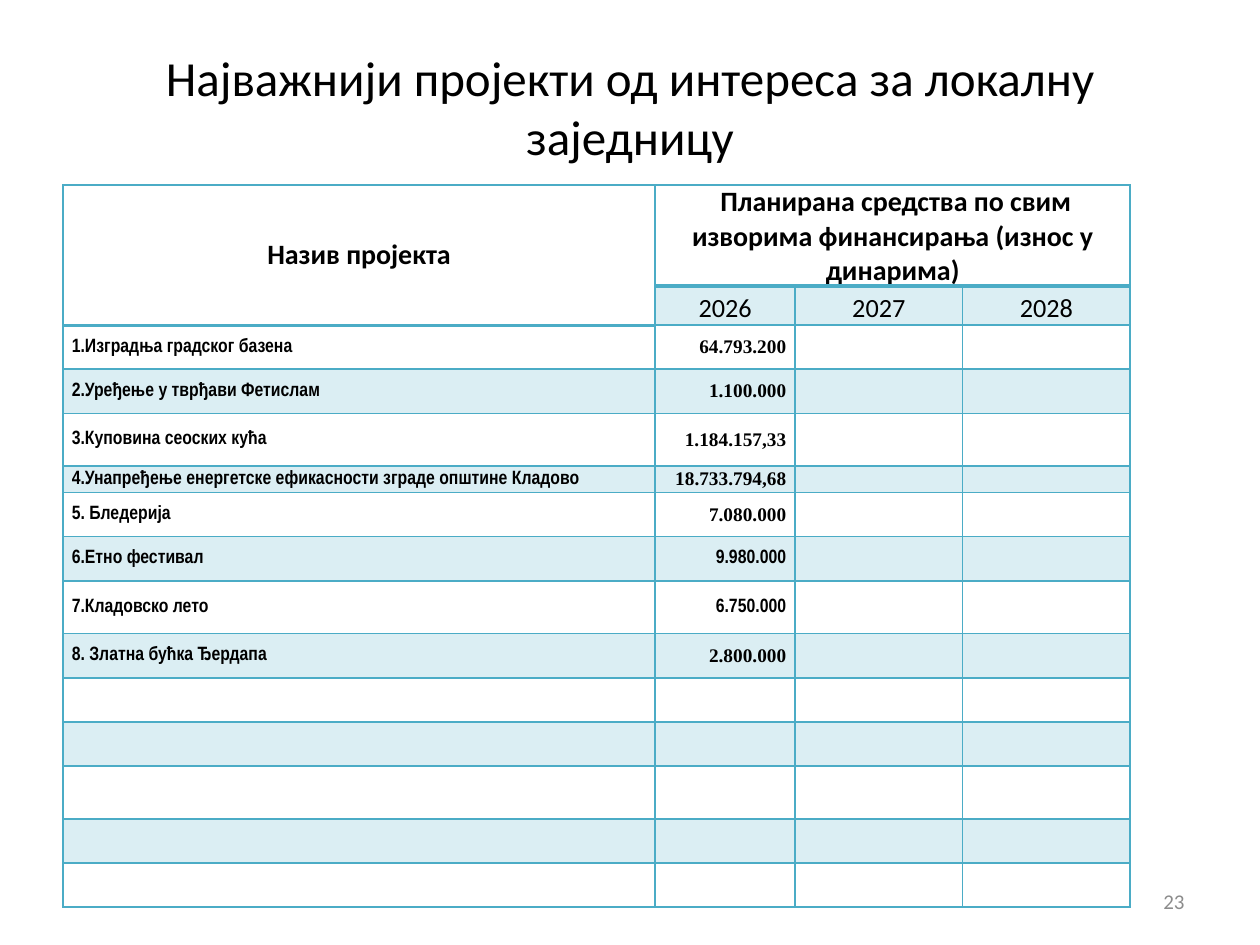
from lxml import etree
from pptx import Presentation
from pptx.dml.color import RGBColor
from pptx.enum import text
from pptx.oxml.ns import qn
from pptx.util import Inches, Pt

BLACK = RGBColor(0x00, 0x00, 0x00)
GRAY = RGBColor(0x8C, 0x8C, 0x8C)
TEAL = RGBColor(0x4B, 0xAC, 0xC6)
LEFT, CENTER, RIGHT = (text.PP_ALIGN.LEFT, text.PP_ALIGN.CENTER,
                       text.PP_ALIGN.RIGHT)
MIDDLE, BOTTOM = text.MSO_ANCHOR.MIDDLE, text.MSO_ANCHOR.BOTTOM
NARROW, SERIF = "Arial Narrow", "Times New Roman"

COL_WIDTHS = [4.7, 1.11, 1.33, 1.33]
HEADER_HEIGHTS = [0.57, 0.31]
BODY_HEIGHTS = [0.35, 0.35, 0.42, 0.21, 0.35, 0.35, 0.42,
                0.35, 0.35, 0.35, 0.42, 0.35, 0.35]
YEARS = ["2026", "2027", "2028"]
PROJECTS = [
    ("1.Изградња градског базена", "64.793.200", SERIF),
    ("2.Уређење у тврђави Фетислам", "1.100.000", SERIF),
    ("3.Куповина сеоских кућа", "1.184.157,33", SERIF),
    ("4.Унапређење енергетске ефикасности зграде општине Кладово",
     "18.733.794,68", SERIF),
    ("5. Бледерија", "7.080.000", SERIF),
    ("6.Етно фестивал", "9.980.000", NARROW),
    ("7.Кладовско лето", "6.750.000", NARROW),
    ("8. Златна бућка Ђердапа", "2.800.000", SERIF),
]


def add_run(p, words, size, font="Calibri", color=BLACK, bold=False):
    r = p.add_run()
    r.text = words
    r.font.size = Pt(size)
    r.font.name = font
    r.font.bold = bold
    r.font.color.rgb = color


def add_text(s, box, words, size, align, color=BLACK):
    tf = s.shapes.add_textbox(*map(Inches, box)).text_frame
    tf.word_wrap = True
    tf.vertical_anchor = MIDDLE
    p = tf.paragraphs[0]
    p.alignment = align
    add_run(p, words, size, color=color)


def set_borders(cell, bottom):
    tcPr = cell._tc.get_or_add_tcPr()
    for i, (side, width) in enumerate(
            [("lnL", 1), ("lnR", 1), ("lnT", 1), ("lnB", bottom)]):
        ln = etree.Element(qn("a:" + side), w=str(Pt(width)))
        fill = etree.SubElement(ln, qn("a:solidFill"))
        etree.SubElement(fill, qn("a:srgbClr"), val=str(TEAL))
        tcPr.insert(i, ln)


def format_cell(cell, shaded, bottom=1):
    cell.margin_left = cell.margin_right = Inches(0.07)
    cell.margin_top = cell.margin_bottom = 0
    if shaded:
        cell.fill.solid()
        cell.fill.fore_color.rgb = TEAL
        color = cell._tc.tcPr.find(".//" + qn("a:srgbClr"))
        etree.SubElement(color, qn("a:alpha"), val="20000")
    else:
        cell.fill.background()
    set_borders(cell, bottom)
    # Keeps empty cells from stretching their row
    p = cell.text_frame.paragraphs[0]
    etree.SubElement(p._p, qn("a:endParaRPr"), sz="1100")


def fill_cell(cell, words, size, align, anchor=MIDDLE, font="Calibri",
              bold=True):
    cell.vertical_anchor = anchor
    p = cell.text_frame.paragraphs[0]
    p.alignment = align
    add_run(p, words, size, font, bold=bold)


def add_project_table(s, left, top):
    heights = HEADER_HEIGHTS + BODY_HEIGHTS
    table = s.shapes.add_table(
        len(heights), len(COL_WIDTHS), Inches(left), Inches(top),
        Inches(sum(COL_WIDTHS)), Inches(sum(heights))).table
    table.first_row = table.horz_banding = False
    for col, width in zip(table.columns, COL_WIDTHS):
        col.width = Inches(width)
    for i, (row, height) in enumerate(zip(table.rows, heights)):
        row.height = Inches(height)
        for j, cell in enumerate(row.cells):
            thick = i == 0 or (i == 1 and j == 0)
            shaded = i % 2 == 1 and (i, j) != (1, 0)
            format_cell(cell, shaded, 2 if thick else 1)

    table.cell(0, 0).merge(table.cell(1, 0))
    table.cell(0, 1).merge(table.cell(0, 3))
    fill_cell(table.cell(0, 0), "Назив пројекта", 16, CENTER)
    fill_cell(table.cell(0, 1),
              " Планирана средства по свим изворима финансирања "
              "(износ у динарима)", 16, CENTER, BOTTOM)
    for j, year in enumerate(YEARS, 1):
        fill_cell(table.cell(1, j), year, 15, CENTER, BOTTOM, bold=False)
    for i, (name, amount, font) in enumerate(PROJECTS, 2):
        fill_cell(table.cell(i, 0), name, 11, LEFT, font=NARROW)
        fill_cell(table.cell(i, 1), amount, 11, RIGHT, font=font)


def main():
    prs = Presentation()
    prs.slide_width, prs.slide_height = Inches(10), Inches(7.5)
    s = prs.slides.add_slide(prs.slide_layouts[6])
    add_text(s, (0.5, 0.3, 9, 1.09),
             "Најважнији пројекти од интереса за локалну заједницу",
             28, CENTER)
    add_text(s, (7.17, 6.95, 2.33, 0.4), "23", 12, RIGHT, GRAY)
    add_project_table(s, 0.5, 1.47)
    prs.save("out.pptx")


if __name__ == "__main__":
    main()
